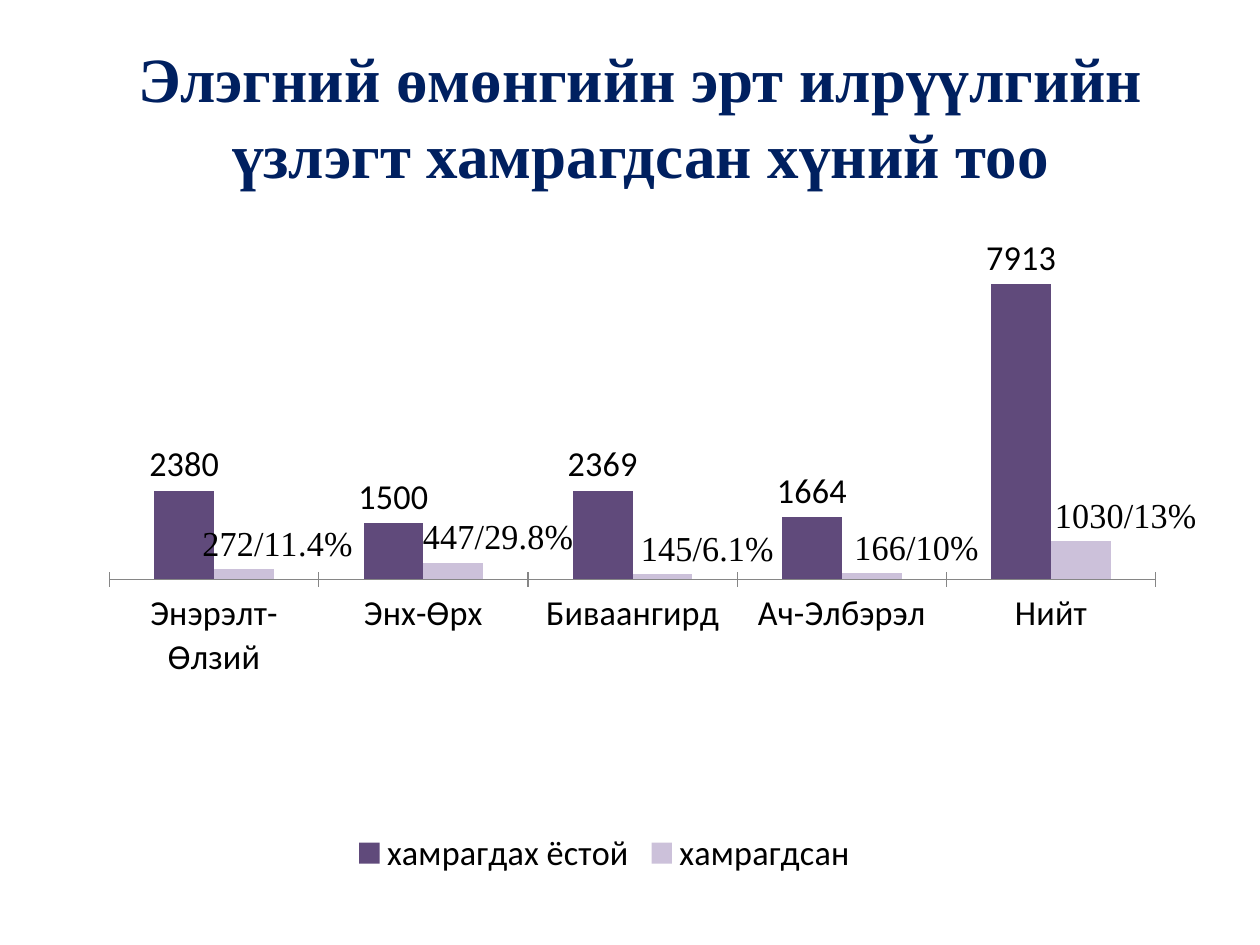
"""Build the slide on liver cancer screening coverage by clinic."""
from lxml.etree import SubElement
from pptx import Presentation
from pptx.chart.data import CategoryChartData
from pptx.dml.color import RGBColor
from pptx.enum.chart import XL_CHART_TYPE as ChartType, XL_LABEL_POSITION as LabelPos
from pptx.enum.chart import XL_LEGEND_POSITION as LegendPos, XL_TICK_MARK as TickMark
from pptx.enum.chart import XL_TICK_LABEL_POSITION as TickLabelPos
from pptx.enum.text import MSO_ANCHOR, PP_ALIGN
from pptx.oxml import parse_xml
from pptx.oxml.ns import nsdecls, qn
from pptx.util import Pt

NAVY = RGBColor(0x00, 0x20, 0x60)
PURPLE = RGBColor(0x60, 0x4A, 0x7B)
LILAC = RGBColor(0xCC, 0xC1, 0xDA)
GREY = RGBColor(0x86, 0x86, 0x86)
BLACK = RGBColor(0, 0, 0)

CLINICS = ["Энэрэлт-Өлзий", "Энх-Өрх", "Биваангирд", "Ач-Элбэрэл", "Нийт"]
EXPECTED = [2380, 1500, 2369, 1664, 7913]
SCREENED = [272, 447, 145, 166, 1030]
SHARES = ["11.4%", "29.8%", "6.1%", "10%", "13%"]
LABEL_SHIFTS = [0.03, 0.04, 0.04, 0.04, 0.04]


def manual_layout(**values):
    """Return a chart layout element with the given settings."""
    layout = parse_xml(f"<c:layout {nsdecls('c')}/>")
    manual = SubElement(layout, qn("c:manualLayout"))
    for name, value in values.items():
        SubElement(manual, qn(f"c:{name}")).set("val", str(value))
    return layout


class SlideBuilder:
    """Hold the style and the current slide."""

    title_font, chart_font = "Times New Roman", "Calibri"
    title_size, chart_size = Pt(36), Pt(20)

    def __init__(self, prs):
        self.s = prs.slides.add_slide(prs.slide_layouts[5])

    def title(self, text, x, y, w, h):
        """Fill and place the title."""
        sp = self.s.shapes.title
        sp.left, sp.top, sp.width, sp.height = Pt(x), Pt(y), Pt(w), Pt(h)
        tf = sp.text_frame
        tf.text = text
        tf.vertical_anchor = MSO_ANCHOR.MIDDLE
        p = tf.paragraphs[0]
        p.alignment = PP_ALIGN.CENTER
        self.style(p.runs[0].font, self.title_font, self.title_size, NAVY, True)

    def style(self, font, name, size, color, bold=False):
        """Set the main properties of a font."""
        font.name, font.size, font.bold = name, size, bold
        font.color.rgb = color

    def columns(self, categories, series, colors, x, y, w, h):
        """Add a clustered column chart and return it."""
        data = CategoryChartData()
        data.categories = categories
        for name, values in series.items():
            data.add_series(name, values)
        chart = self.s.shapes.add_chart(
            ChartType.COLUMN_CLUSTERED, Pt(x), Pt(y), Pt(w), Pt(h), data).chart
        self.style(chart.font, self.chart_font, self.chart_size, BLACK)
        chart.has_title = False
        chart.has_legend = True
        chart.legend.position = LegendPos.BOTTOM
        chart.legend.include_in_layout = False
        chart.category_axis.major_tick_mark = TickMark.CROSS
        chart.category_axis.tick_label_position = TickLabelPos.LOW
        chart.category_axis.format.line.color.rgb = GREY
        axis = chart.value_axis
        axis.visible = axis.has_major_gridlines = False
        axis.minimum_scale, axis.maximum_scale = 0, 9000
        plot = chart.plots[0]
        plot.gap_width, plot.overlap, plot.vary_by_categories = 150, 0, False
        for ser, color in zip(plot.series, colors):
            ser.format.fill.solid()
            ser.format.fill.fore_color.rgb = color
            labels = ser.data_labels
            labels.show_value = True
            labels.position = LabelPos.OUTSIDE_END
        area = chart.element.find(".//" + qn("c:plotArea"))
        for old in area.findall(qn("c:layout")):
            area.remove(old)
        area.insert(0, manual_layout(layoutTarget="inner", xMode="edge", yMode="edge",
                                     x=0.06, y=0.05, w=0.93, h=0.5))
        return chart

    def point_labels(self, ser, texts, shifts):
        """Write own labels on the points, moved right by shares of the chart width."""
        for i, text in enumerate(texts):
            label = ser.points[i].data_label
            tf = label.text_frame
            tf.text = text
            self.style(tf.paragraphs[0].runs[0].font, self.title_font, self.chart_size, BLACK)
            label.position = LabelPos.OUTSIDE_END
        for element, shift in zip(ser.data_labels._element.findall(qn("c:dLbl")), shifts):
            element.insert(1, manual_layout(x=shift, y=0))


def main():
    prs = Presentation()
    prs.slide_width, prs.slide_height = Pt(720), Pt(540)
    slide = SlideBuilder(prs)
    slide.title("Элэгний өмөнгийн эрт илрүүлгийн үзлэгт хамрагдсан хүний тоо",
                36, 24, 660, 84)
    chart = slide.columns(CLINICS, {"хамрагдах ёстой": EXPECTED, "хамрагдсан": SCREENED},
                          [PURPLE, LILAC], 24, 120, 660, 384)
    texts = [f"{count}/{share}" for count, share in zip(SCREENED, SHARES)]
    slide.point_labels(chart.plots[0].series[1], texts, LABEL_SHIFTS)
    prs.save("out.pptx")


if __name__ == "__main__":
    main()
